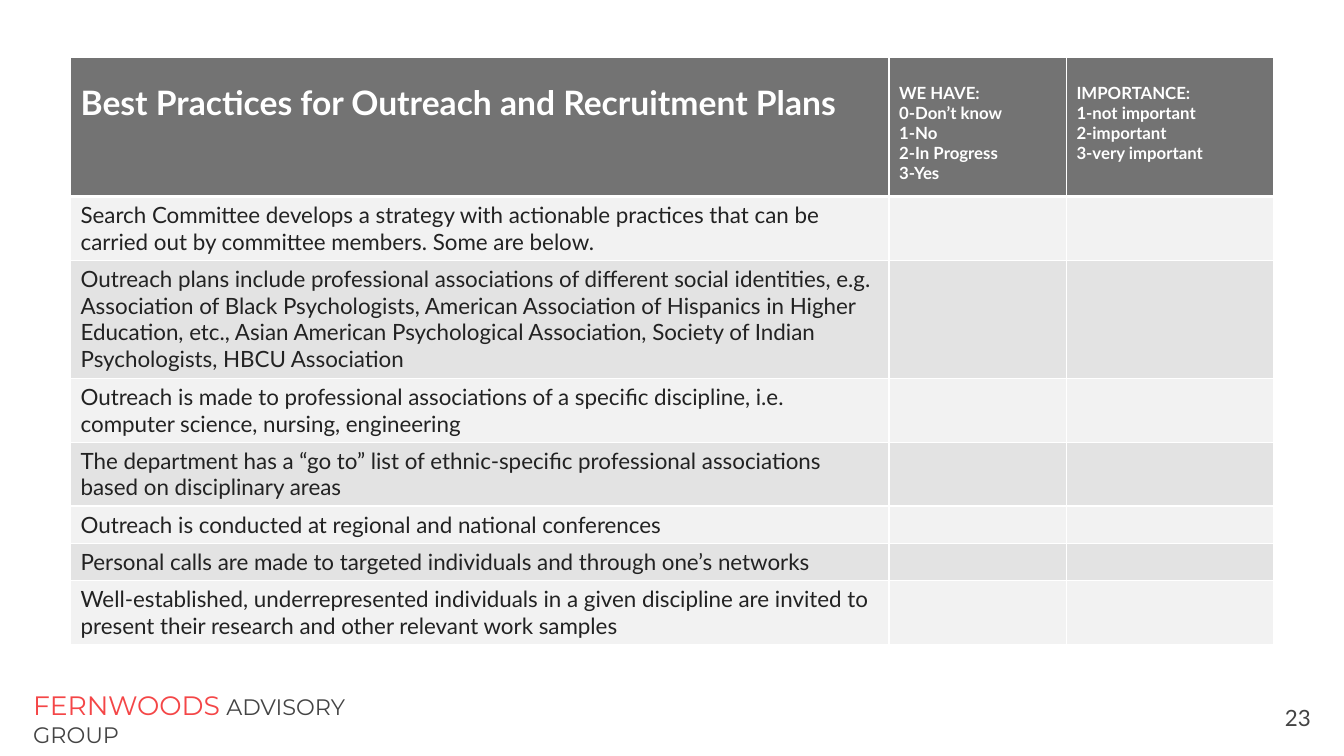
from dataclasses import dataclass

from lxml import etree
from pptx import Presentation
from pptx.dml.color import RGBColor
from pptx.enum.text import PP_ALIGN
from pptx.oxml.ns import qn
from pptx.util import Inches, Pt

LEFT, RIGHT = PP_ALIGN.LEFT, PP_ALIGN.RIGHT
SLIDE_W, SLIDE_H = Inches(13.333), Inches(7.5)
BLANK_LAYOUT = 6

WHITE, INK, GREY, RED = "FFFFFF", "222222", "444444", "F44647"
HEADER_FILL, BANDS = "737373", ("F2F2F2", "E3E3E3")

# Percent shares of the slide's width and height
TABLE_X, TABLE_Y = 5.25, 7.6
COLUMN_SHARES = (60.9, 13.2, 15.38)
HEADER_SHARE = 18.4
LINE_SHARES = {1: 4.93, 2: 8.4, 4: 15.6}  # row height by lines of text


@dataclass(frozen=True)
class Heading:
    lines: tuple[str, ...]
    size: int


@dataclass(frozen=True)
class Practice:
    text: str
    lines: int


@dataclass(frozen=True)
class Piece:
    text: str
    size: int
    font: str
    color: str


@dataclass(frozen=True)
class Label:
    box: tuple[float, float, float, float]
    pieces: tuple[Piece, ...]
    align: PP_ALIGN = LEFT


HEADINGS = (
    Heading(("Best Practices for Outreach and Recruitment Plans",), 24),
    Heading(("WE HAVE:", "0-Don’t know", "1-No", "2-In Progress", "3-Yes"), 12),
    Heading(("IMPORTANCE:", "1-not important", "2-important",
             "3-very important"), 12),
)

PRACTICES = (
    Practice("Search Committee develops a strategy with actionable practices that "
             "can be carried out by committee members. Some are below.", 2),
    Practice("Outreach plans include professional associations of different social "
             "identities, e.g. Association of Black Psychologists, American "
             "Association of Hispanics in Higher Education, etc., Asian American "
             "Psychological Association, Society of Indian Psychologists, "
             "HBCU Association", 4),
    Practice("Outreach is made to professional associations of a specific "
             "discipline, i.e. computer science, nursing, engineering", 2),
    Practice("The department has a “go to” list of ethnic-specific professional "
             "associations based on disciplinary areas", 2),
    Practice("Outreach is conducted at regional and national conferences", 1),
    Practice("Personal calls are made to targeted individuals and through one’s "
             "networks", 1),
    Practice("Well-established, underrepresented individuals in a given discipline "
             "are invited to present their research and other relevant work "
             "samples", 2),
)

LABELS = (
    Label((90.38, 92.53, 7.88, 4.93), (Piece("23", 16, "Lato", GREY),), RIGHT),
    Label((1.73, 90.53, 25.35, 6.67), (
        Piece("FERNWOODS", 19, "Montserrat", RED),
        Piece(" ", 18, "Lato", GREY),
        Piece("ADVISORY GROUP", 16, "Montserrat", GREY),
    )),
)


def across(share: float) -> int:
    return round(SLIDE_W * share / 100)


def down(share: float) -> int:
    return round(SLIDE_H * share / 100)


def rgb(color: str) -> RGBColor:
    return RGBColor.from_string(color)


def add_text(p, text: str, *, size: int, color: str, font: str = "Lato",
             bold: bool = False) -> None:
    r = p.add_run()
    r.text = text
    r.font.name = font
    r.font.size = Pt(size)
    r.font.bold = bold
    r.font.color.rgb = rgb(color)


def style_cell(cell, fill: str, bottom: int = 1, top: int = 1) -> None:
    """Draw white borders, then the fill, in the order the schema needs."""
    props = cell._tc.get_or_add_tcPr()
    for tag, width in (("a:lnL", 1), ("a:lnR", 1), ("a:lnT", top), ("a:lnB", bottom)):
        ln = etree.SubElement(props, qn(tag), w=str(Pt(width)))
        solid = etree.SubElement(ln, qn("a:solidFill"))
        etree.SubElement(solid, qn("a:srgbClr"), val=WHITE)
    cell.fill.solid()
    cell.fill.fore_color.rgb = rgb(fill)


def add_practice_table(s) -> None:
    row_shares = [HEADER_SHARE] + [LINE_SHARES[item.lines] for item in PRACTICES]
    table = s.shapes.add_table(
        len(row_shares), len(COLUMN_SHARES), across(TABLE_X), down(TABLE_Y),
        across(sum(COLUMN_SHARES)), down(sum(row_shares))).table
    for column, share in zip(table.columns, COLUMN_SHARES):
        column.width = across(share)
    for row, share in zip(table.rows, row_shares):
        row.height = down(share)

    # Header row
    for cell, heading in zip(table.rows[0].cells, HEADINGS):
        style_cell(cell, HEADER_FILL, bottom=3)
        cell.margin_top = Inches(0.25)
        tf = cell.text_frame
        for i, line in enumerate(heading.lines):
            p = tf.add_paragraph() if i else tf.paragraphs[0]
            add_text(p, line, size=heading.size, color=WHITE, bold=True)

    # Practices, with empty cells for the scores
    for i, practice in enumerate(PRACTICES):
        cells = list(table.rows[i + 1].cells)
        for cell in cells:
            style_cell(cell, BANDS[i % 2], top=1 if i else 3)
        add_text(cells[0].text_frame.paragraphs[0], practice.text,
                 size=16, color=INK)
        for cell in cells[1:]:
            p = cell.text_frame.paragraphs[0]
            etree.SubElement(p._p, qn("a:endParaRPr"), sz="1600")


def add_label(s, label: Label) -> None:
    x, y, w, h = label.box
    tf = s.shapes.add_textbox(across(x), down(y), across(w), down(h)).text_frame
    tf.word_wrap = True
    p = tf.paragraphs[0]
    p.alignment = label.align
    for piece in label.pieces:
        add_text(p, piece.text, size=piece.size, color=piece.color, font=piece.font)


def main() -> None:
    prs = Presentation()
    prs.slide_width, prs.slide_height = SLIDE_W, SLIDE_H
    s = prs.slides.add_slide(prs.slide_layouts[BLANK_LAYOUT])

    # Page number and organisation name
    for label in LABELS:
        add_label(s, label)

    add_practice_table(s)
    prs.save("out.pptx")


if __name__ == "__main__":
    main()
